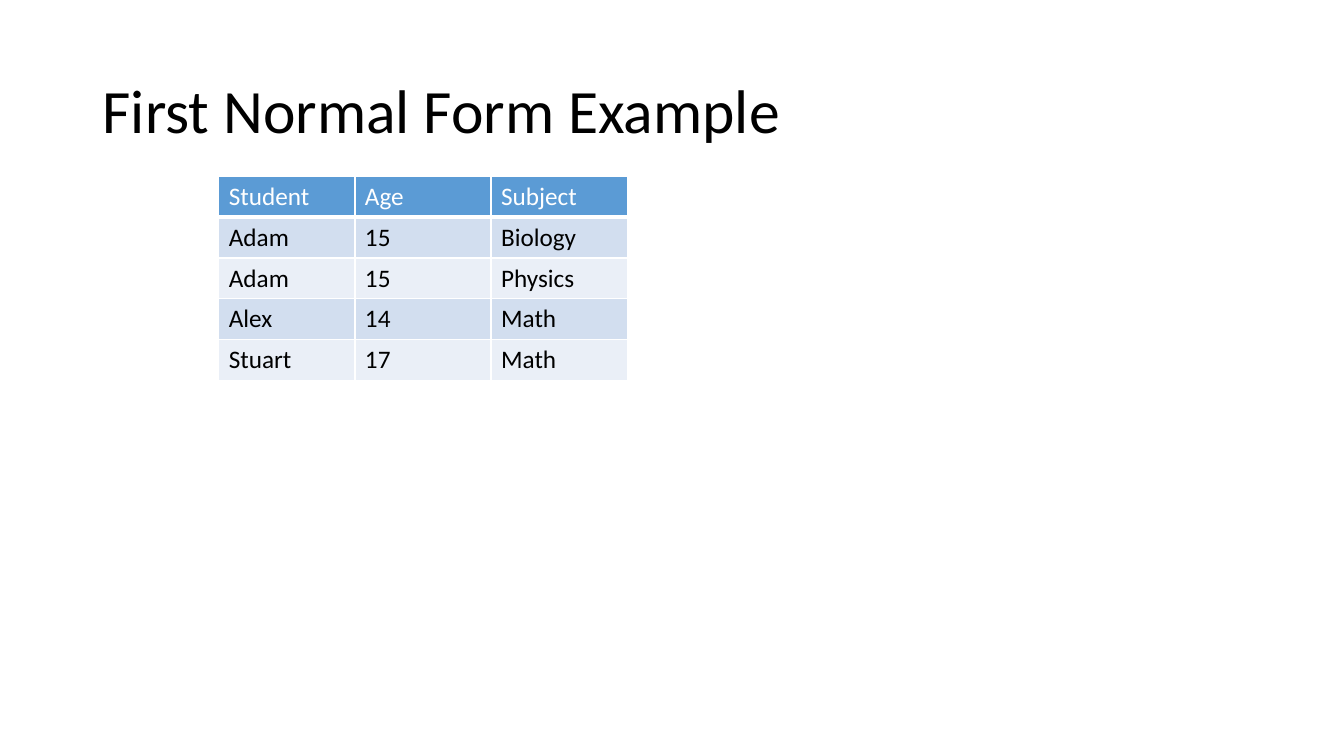
from lxml import etree
from pptx import Presentation
from pptx.dml.color import RGBColor
from pptx.enum.text import MSO_ANCHOR
from pptx.oxml.ns import qn
from pptx.util import Inches, Pt

MIDDLE = MSO_ANCHOR.MIDDLE

BLACK = RGBColor(0x00, 0x00, 0x00)
WHITE = RGBColor(0xFF, 0xFF, 0xFF)
HEADER_BLUE = RGBColor(0x5B, 0x9B, 0xD5)
BAND_DARK = RGBColor(0xD2, 0xDE, 0xEF)
BAND_LIGHT = RGBColor(0xEA, 0xEF, 0xF7)

STUDENT_ROWS = [
    ("Student", "Age", "Subject"),
    ("Adam", "15", "Biology"),
    ("Adam", "15", "Physics"),
    ("Alex", "14", "Math"),
    ("Stuart", "17", "Math"),
]


class SlideBuilder:
    """Holds the text style and the current slide."""

    font_name = "Calibri"
    title_size = 44
    table_size = 18

    def __init__(self, slide):
        self.slide = slide

    def add_run(self, paragraph, text, size, color):
        run = paragraph.add_run()
        run.text = text
        run.font.name = self.font_name
        run.font.size = Pt(size)
        run.font.bold = False
        run.font.color.rgb = color

    def add_title(self, text, left, top, width, height):
        shape = self.slide.shapes.add_textbox(
            Inches(left), Inches(top), Inches(width), Inches(height))
        frame = shape.text_frame
        frame.word_wrap = True
        frame.vertical_anchor = MIDDLE
        paragraph = frame.paragraphs[0]
        paragraph.line_spacing = 0.9
        self.add_run(paragraph, text, self.title_size, BLACK)

    def add_borders(self, cell, bottom_width):
        properties = cell._tc.get_or_add_tcPr()
        widths = {"a:lnL": 1, "a:lnR": 1, "a:lnT": 1, "a:lnB": bottom_width}
        for tag, width in widths.items():
            line = etree.SubElement(properties, qn(tag), w=str(Pt(width)))
            fill = etree.SubElement(line, qn("a:solidFill"))
            etree.SubElement(fill, qn("a:srgbClr"), val=str(WHITE))

    def add_table(self, rows, left, top, column_width, row_height):
        column_count = len(rows[0])
        table = self.slide.shapes.add_table(
            len(rows), column_count, Inches(left), Inches(top),
            Inches(column_width * column_count),
            Inches(row_height * len(rows))).table
        for column in table.columns:
            column.width = Inches(column_width)
        for row_index, values in enumerate(rows):
            table.rows[row_index].height = Inches(row_height)
            is_header = row_index == 0
            band = BAND_DARK if row_index % 2 else BAND_LIGHT
            for column_index, value in enumerate(values):
                cell = table.cell(row_index, column_index)
                # Borders come before the fill in the cell properties
                self.add_borders(cell, 3 if is_header else 1)
                cell.fill.solid()
                cell.fill.fore_color.rgb = HEADER_BLUE if is_header else band
                cell.vertical_anchor = MIDDLE
                self.add_run(cell.text_frame.paragraphs[0], value,
                             self.table_size, WHITE if is_header else BLACK)


def main():
    presentation = Presentation()
    presentation.slide_width = Inches(13.33)
    presentation.slide_height = Inches(7.5)
    blank_layout = presentation.slide_layouts[6]
    builder = SlideBuilder(presentation.slides.add_slide(blank_layout))

    # Title
    builder.add_title("First Normal Form Example", 0.92, 0.4, 11.5, 1.45)

    # Student table
    builder.add_table(STUDENT_ROWS, 2.17, 1.75, 1.35, 0.405)

    presentation.save("out.pptx")


if __name__ == "__main__":
    main()
